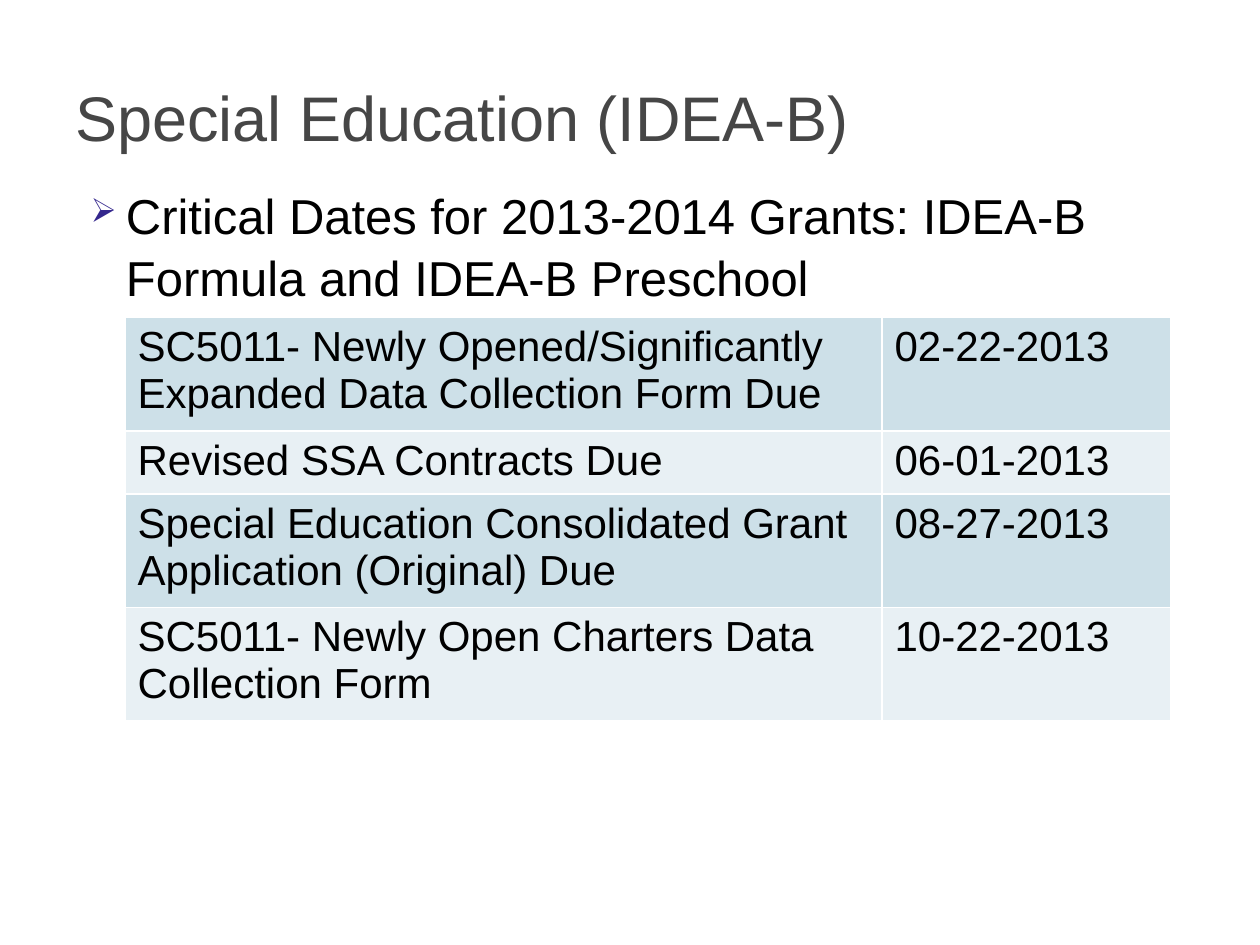
from dataclasses import dataclass

import pptx
import pptx.dml.color
import pptx.enum.text
import pptx.oxml
import pptx.oxml.ns
import pptx.util
from lxml import etree

Cm = pptx.util.Cm
Pt = pptx.util.Pt
qn = pptx.oxml.ns.qn


@dataclass(frozen=True)
class Theme:
    font: str = "Arial"
    title_size: int = 36
    body_size: int = 28
    table_size: int = 24
    title_color: str = "464646"
    text_color: str = "000000"
    bullet_color: str = "34278D"
    border_color: str = "FFFFFF"
    bands: tuple = ("CDE0E8", "E8F0F4")


THEME = Theme()

CRITICAL_DATES = [
    ("SC5011- Newly Opened/Significantly Expanded Data Collection Form Due", "02-22-2013"),
    ("Revised SSA Contracts Due", "06-01-2013"),
    ("Special Education Consolidated Grant Application (Original) Due", "08-27-2013"),
    ("SC5011- Newly Open Charters Data Collection Form", "10-22-2013"),
]


def rgb(color):
    return pptx.dml.color.RGBColor.from_string(color)


def style_text(paragraph, size, color):
    for span in paragraph.runs:
        span.font.name = THEME.font
        span.font.size = Pt(size)
        span.font.color.rgb = rgb(color)


def add_text(page, text, place, size, color):
    box = page.shapes.add_textbox(*(Cm(length) for length in place))
    box.text_frame.word_wrap = True
    box.text_frame.text = text
    style_text(box.text_frame.paragraphs[0], size, color)
    return box


def add_bullet(paragraph, symbol):
    """Give the paragraph a hanging, coloured bullet."""
    properties = paragraph._p.get_or_add_pPr()
    properties.set("marL", str(Cm(1.02)))
    properties.set("indent", str(Cm(-0.71)))
    color = etree.SubElement(properties, qn("a:buClr"))
    etree.SubElement(color, qn("a:srgbClr"), val=THEME.bullet_color)
    etree.SubElement(properties, qn("a:buSzPct"), val="68000")
    etree.SubElement(properties, qn("a:buChar"), char=symbol)


def add_borders(cell):
    properties = cell._tc.get_or_add_tcPr()
    for side in ("lnL", "lnR", "lnT", "lnB"):
        line = etree.SubElement(properties, qn(f"a:{side}"), w=str(Pt(1)))
        fill = etree.SubElement(line, qn("a:solidFill"))
        etree.SubElement(fill, qn("a:srgbClr"), val=THEME.border_color)


def add_date_table(page, rows, left, top, widths, row_height):
    frame = page.shapes.add_table(
        len(rows), len(widths), Cm(left), Cm(top),
        Cm(sum(widths)), Cm(row_height * len(rows)))
    table = frame.table
    table.first_row = False
    for column, width in zip(table.columns, widths):
        column.width = Cm(width)
    for index, values in enumerate(rows):
        for cell, value in zip(table.rows[index].cells, values):
            add_borders(cell)
            cell.fill.solid()
            cell.fill.fore_color.rgb = rgb(THEME.bands[index % 2])
            cell.text_frame.text = value
            style_text(cell.text_frame.paragraphs[0], THEME.table_size, THEME.text_color)


def main():
    deck = pptx.Presentation()
    deck.slide_width, deck.slide_height = Cm(25.4), Cm(19.05)
    page = deck.slides.add_slide(deck.slide_layouts[6])

    body = add_text(
        page, "Critical Dates for 2013-2014 Grants: IDEA-B Formula and IDEA-B Preschool",
        (1.27, 3.56, 22.86, 13.18), THEME.body_size, THEME.text_color)
    paragraph = body.text_frame.paragraphs[0]
    add_bullet(paragraph, "➢")
    paragraph.line_spacing = 1.05

    title = add_text(page, "Special Education (IDEA-B)", (1.27, 0.76, 22.86, 3.18),
                     THEME.title_size, THEME.title_color)
    title.text_frame.vertical_anchor = pptx.enum.text.MSO_ANCHOR.MIDDLE

    add_date_table(page, CRITICAL_DATES, left=2.52, top=6.4,
                   widths=(15.26, 5.82), row_height=1.04)
    deck.save("out.pptx")


if __name__ == "__main__":
    main()
